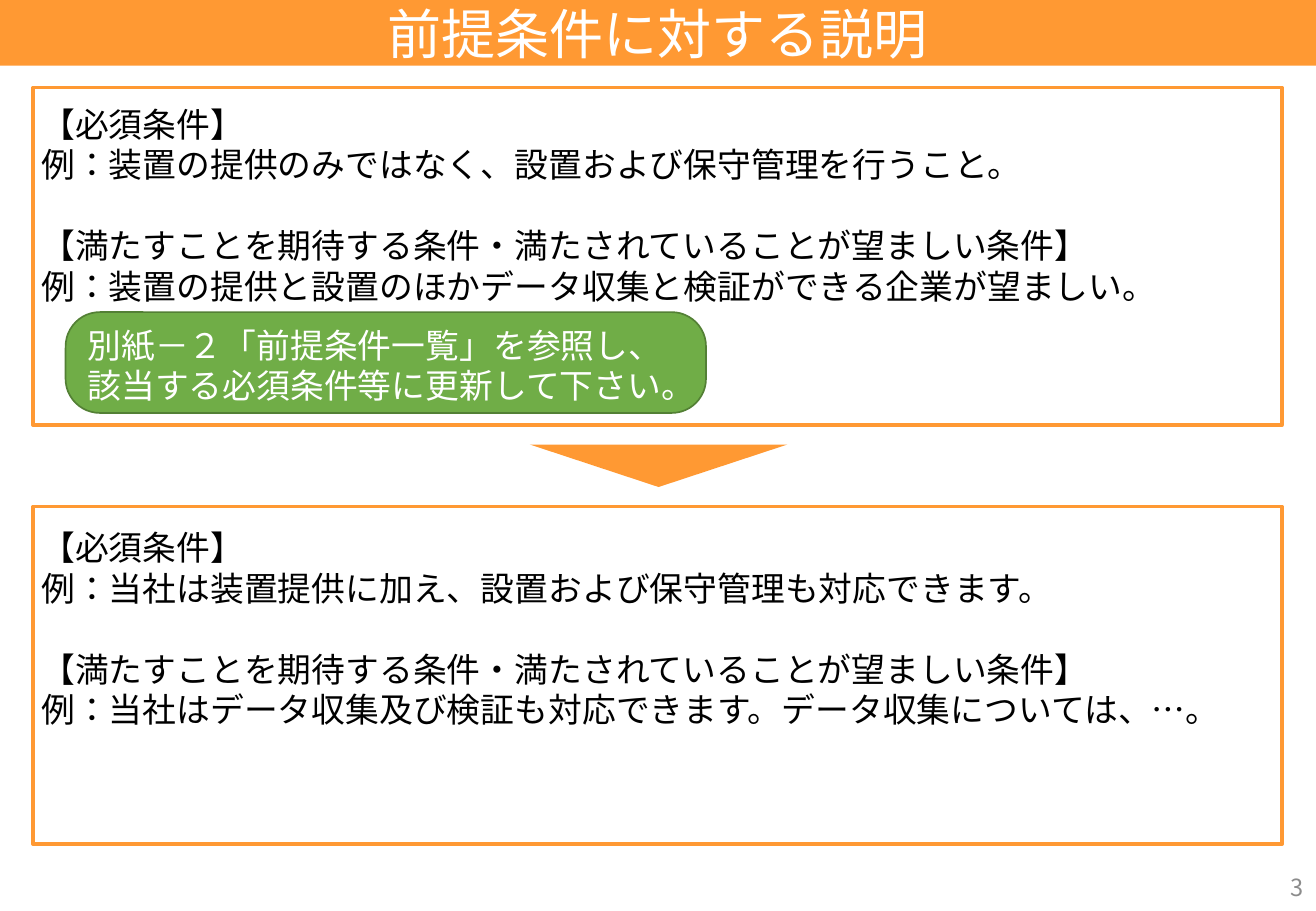
from lxml.etree import SubElement
from pptx import Presentation
from pptx.dml.color import RGBColor
from pptx.enum.lang import MSO_LANGUAGE_ID
from pptx.enum.shapes import MSO_SHAPE
from pptx.enum.text import MSO_ANCHOR, MSO_AUTO_SIZE, PP_ALIGN
from pptx.oxml.ns import qn
from pptx.util import Pt

PX = 9144
FONT = "Noto Sans CJK JP"
COLORS = {
    "orange": "FF9933",
    "green": "70AD47",
    "dark_green": "538035",
    "white": "FFFFFF",
    "black": "000000",
    "gray": "8C8C8C",
}
REQUIRED = "【必須条件】"
DESIRED = "【満たすことを期待する条件・満たされていることが望ましい条件】"


def emu(*lengths):
    """Turn px lengths into EMU."""
    return [length * PX for length in lengths]


def rgb(name):
    """Look up a named colour."""
    return RGBColor.from_string(COLORS[name])


def write(holder, lines, size=20, color="black", align=PP_ALIGN.LEFT,
          anchor=MSO_ANCHOR.TOP, insets=(0, 0, 0, 0), pitch=None, gaps=None):
    """Write formatted lines; gaps maps a line index to its space before."""
    frame = holder.text_frame
    frame.word_wrap = True
    frame.auto_size = MSO_AUTO_SIZE.NONE
    frame.vertical_anchor = anchor
    (frame.margin_left, frame.margin_top,
     frame.margin_right, frame.margin_bottom) = emu(*insets)
    for index, line in enumerate(lines):
        paragraph = frame.paragraphs[0] if index == 0 else frame.add_paragraph()
        paragraph.alignment = align
        paragraph.space_before = Pt((gaps or {}).get(index, 0))
        if pitch:
            paragraph.line_spacing = Pt(pitch)
        run = paragraph.add_run()
        run.text = line
        run.font.size = Pt(size)
        run.font.name = FONT
        run.font.color.rgb = rgb(color)
        run.font.language_id = MSO_LANGUAGE_ID.JAPANESE
        SubElement(run.font._element, qn("a:ea")).set("typeface", FONT)


def draw(slide, kind, box, fill=None, line=None, weight=1):
    """Add a preset shape with the given fill and outline."""
    shape = slide.shapes.add_shape(kind, *emu(*box))
    shape.shadow.inherit = False
    if fill:
        shape.fill.solid()
        shape.fill.fore_color.rgb = rgb(fill)
    else:
        shape.fill.background()
    if line:
        shape.line.color.rgb = rgb(line)
        shape.line.width = Pt(weight)
    else:
        shape.line.fill.background()
    return shape


def add_heading(slide, box, text):
    """Place the title centred on its colour band."""
    left, top, width, height = box
    band = draw(slide, MSO_SHAPE.RECTANGLE, box, fill="orange")
    title = slide.shapes.title
    title._element.addprevious(band._element)
    title_width = 449
    title.left, title.top, title.width, title.height = emu(
        left + (width - title_width) // 2, top, title_width, height)
    write(title, [text], size=32, color="white", align=PP_ALIGN.CENTER,
          anchor=MSO_ANCHOR.MIDDLE)


def add_conditions(slide, box, text_top, text_width, required, desired):
    """Place a framed panel of required and desired conditions."""
    left, top, width, height = box
    draw(slide, MSO_SHAPE.RECTANGLE, box, line="orange", weight=2)
    conditions = slide.shapes.add_textbox(
        *emu(left + 7, top + text_top, text_width, 168))
    write(conditions, [REQUIRED, required, DESIRED, desired],
          insets=(0, 2, 0, 0), pitch=24, gaps={2: 24})


def add_instruction(slide, box, lines):
    """Place the rounded callout with its instruction."""
    callout = draw(slide, MSO_SHAPE.ROUNDED_RECTANGLE, box,
                   fill="green", line="dark_green")
    callout.adjustments[0] = 0.34
    write(callout, lines, color="white", anchor=MSO_ANCHOR.MIDDLE,
          insets=(10, 9, 10, 5), pitch=24)


def add_down_arrow(slide, box):
    """Place the triangle that points to the lower panel."""
    arrow = draw(slide, MSO_SHAPE.ISOSCELES_TRIANGLE, box, fill="orange")
    arrow._element.spPr.find(qn("a:xfrm")).set("flipV", "1")


def add_page_number(slide, box, number):
    """Place the page number at the right of its box."""
    page_number = slide.shapes.add_textbox(*emu(*box))
    write(page_number, [number], size=14, color="gray", align=PP_ALIGN.RIGHT,
          anchor=MSO_ANCHOR.MIDDLE, insets=(10, 5, 10, 5))


def main():
    """Build and save the slide."""
    deck = Presentation()
    deck.slide_width, deck.slide_height = emu(1083, 750)
    slide = deck.slides.add_slide(deck.slide_layouts[5])
    add_heading(slide, (0, 0, 1083, 54), "前提条件に対する説明")
    add_conditions(slide, (27, 72, 1028, 278), 11, 926,
                   "例：装置の提供のみではなく、設置および保守管理を行うこと。",
                   "例：装置の提供と設置のほかデータ収集と検証ができる企業が望ましい。")
    add_instruction(slide, (54, 257, 527, 83),
                    ["別紙－２「前提条件一覧」を参照し、",
                     "該当する必須条件等に更新して下さい。"])
    add_down_arrow(slide, (436, 366, 212, 35))
    add_conditions(slide, (27, 417, 1028, 278), 15, 1010,
                   "例：当社は装置提供に加え、設置および保守管理も対応できます。",
                   "例：当社はデータ収集及び検証も対応できます。データ収集については、…。")
    add_page_number(slide, (840, 710, 243, 40), "3")
    deck.save("out.pptx")


if __name__ == "__main__":
    main()
